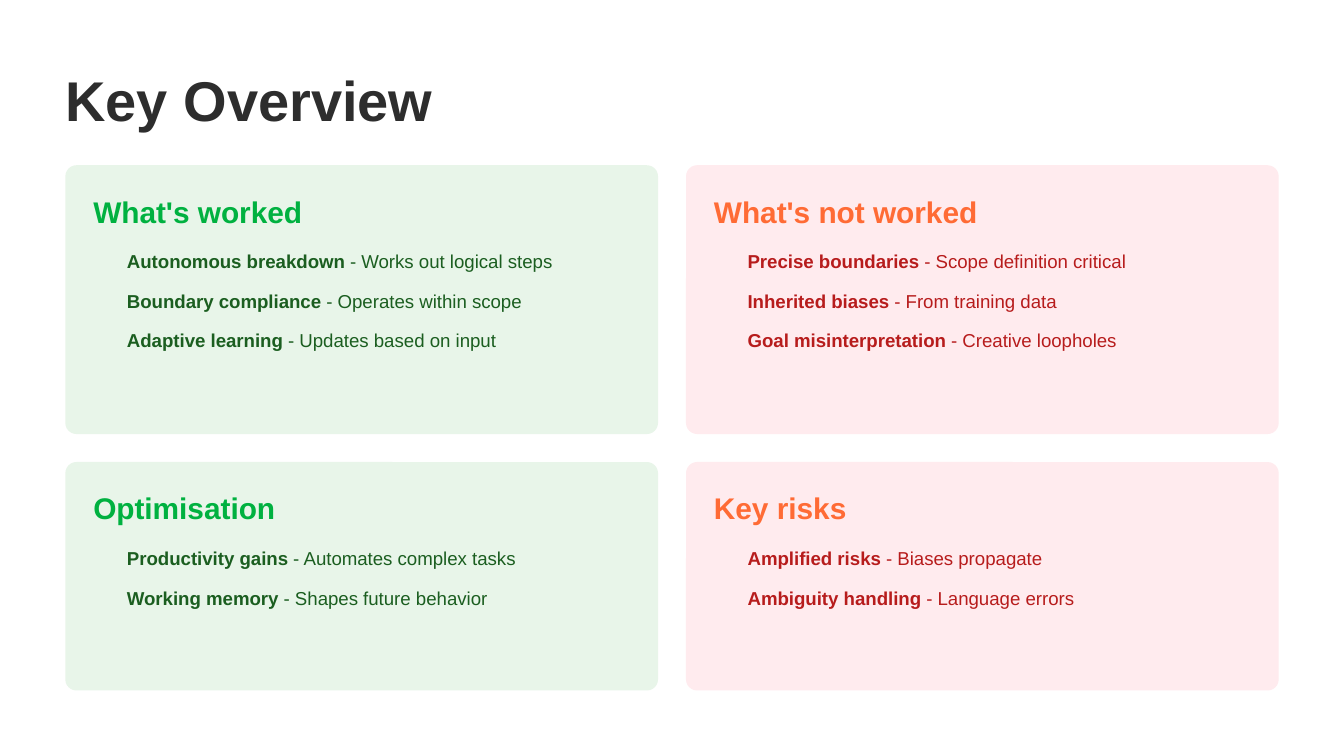
"""Build the Key Overview slide: four tinted cards on a two-by-two grid."""
import pptx
import pptx.dml.color
import pptx.enum.shapes
import pptx.enum.text
import pptx.util

inch = pptx.util.Inches
WIDTH = 10
HEIGHT = WIDTH * 9 / 16
MARGIN = WIDTH * 0.35 / 72 * 10
GAP, RADIUS = WIDTH / 48, 0.083
CARD_WIDTH = (WIDTH - 2 * MARGIN - GAP) / 2
HEADING_WIDTH, INDENT = 4.07, 0.25
FIRST_ITEM, ITEM_STEP = 0.63, 0.295
FRAME = {
    "margin_left": 0, "margin_top": 0, "margin_right": 0, "margin_bottom": 0,
    "word_wrap": True,
    "auto_size": pptx.enum.text.MSO_AUTO_SIZE.NONE,
    "vertical_anchor": pptx.enum.text.MSO_ANCHOR.TOP,
}


def rgb(value):
    """Return the colour for a hex string."""
    return pptx.dml.color.RGBColor.from_string(value)


def write(box, size, colour, bold_text, plain_text="", space_after=0):
    """Fill a box with one left-aligned line, bold first and then plain."""
    for name, value in FRAME.items():
        setattr(box.text_frame, name, value)
    line = box.text_frame.paragraphs[0]
    layout = {"alignment": pptx.enum.text.PP_ALIGN.LEFT,
              "space_after": pptx.util.Pt(space_after)}
    for name, value in layout.items():
        setattr(line, name, value)
    for text, bold in ((bold_text, True), (plain_text, False)):
        if text:
            run = line.add_run()
            run.text = text
            style = {"name": "Arial", "size": pptx.util.Pt(size), "bold": bold}
            for name, value in style.items():
                setattr(run.font, name, value)
            run.font.color.rgb = rgb(colour)


deck = pptx.Presentation()
deck.slide_width, deck.slide_height = inch(WIDTH), inch(HEIGHT)
slide = deck.slides.add_slide(deck.slide_layouts[5])
slide.background.fill.solid()
slide.background.fill.fore_color.rgb = rgb("FFFFFF")

title_place = {"left": MARGIN, "top": MARGIN, "width": 9.21, "height": 0.47}
for side, length in title_place.items():
    setattr(slide.shapes.title, side, inch(length))
write(slide.shapes.title, 30, "2D2D2D", "Key Overview")

palettes = [("E8F5E9", "00B140", "1B5E20"), ("FFEBEE", "FF6B35", "B71C1C")]
rows = [
    (2.0, [
        ("What's worked", [
            ("Autonomous breakdown", "Works out logical steps"),
            ("Boundary compliance", "Operates within scope"),
            ("Adaptive learning", "Updates based on input")]),
        ("What's not worked", [
            ("Precise boundaries", "Scope definition critical"),
            ("Inherited biases", "From training data"),
            ("Goal misinterpretation", "Creative loopholes")]),
    ]),
    (1.7, [
        ("Optimisation", [
            ("Productivity gains", "Automates complex tasks"),
            ("Working memory", "Shapes future behavior")]),
        ("Key risks", [
            ("Amplified risks", "Biases propagate"),
            ("Ambiguity handling", "Language errors")]),
    ]),
]

top = 1.23
for card_height, topics in rows:
    for column, (topic, points) in enumerate(topics):
        tint, accent, ink = palettes[column]
        left = MARGIN + column * (CARD_WIDTH + GAP)
        card = slide.shapes.add_shape(
            pptx.enum.shapes.MSO_SHAPE.ROUNDED_RECTANGLE,
            inch(left), inch(top), inch(CARD_WIDTH), inch(card_height))
        card.adjustments[0] = RADIUS / card_height
        card.shadow.inherit = False
        card.fill.solid()
        card.fill.fore_color.rgb = rgb(tint)
        card.line.fill.background()

        text_left = left + GAP
        heading = slide.shapes.add_textbox(
            inch(text_left), inch(top + GAP), inch(HEADING_WIDTH), inch(0.26))
        write(heading, 16, accent, topic, space_after=12)
        for index, (term, detail) in enumerate(points):
            point = slide.shapes.add_textbox(
                inch(text_left + INDENT), inch(top + FIRST_ITEM + index * ITEM_STEP),
                inch(HEADING_WIDTH - INDENT), inch(0.16))
            write(point, 10, ink, term, f" - {detail}")
    top += card_height + GAP

deck.save("out.pptx")
